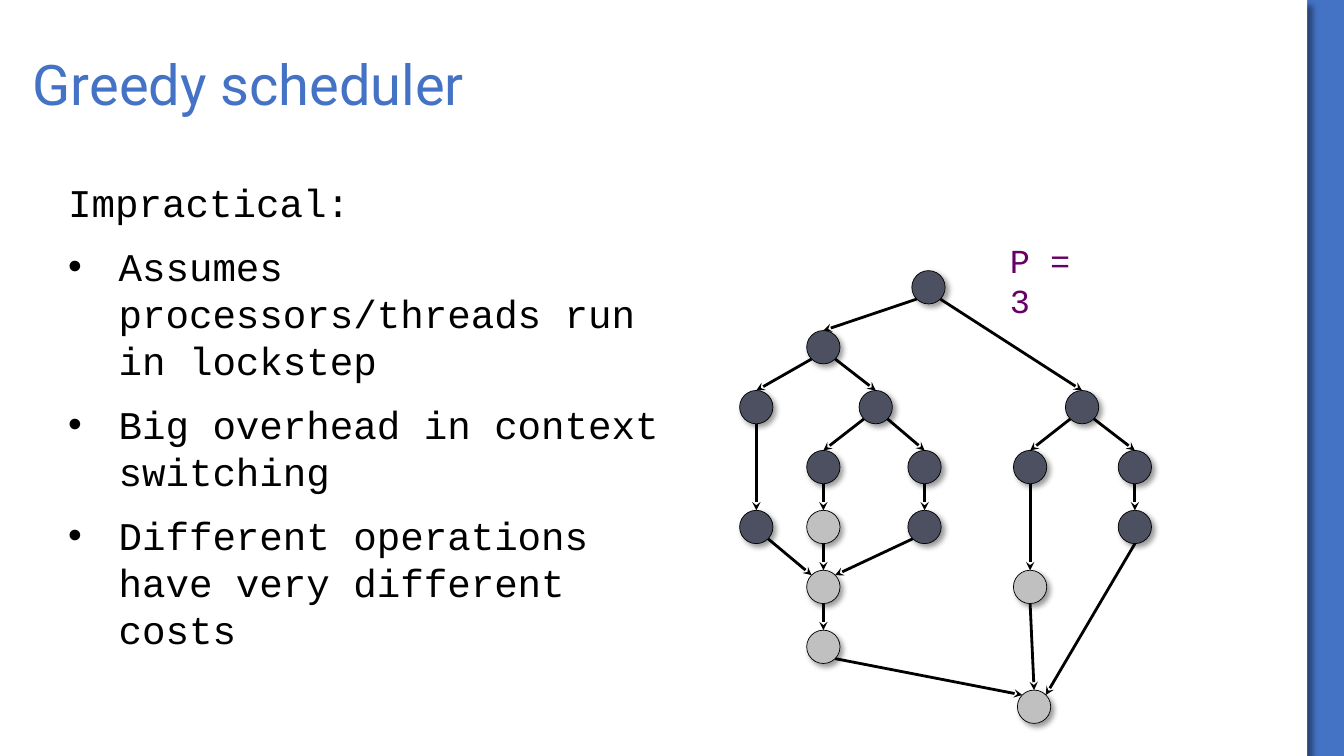
import math

import pptx
import pptx.dml.color
import pptx.enum.shapes
import pptx.enum.text
import pptx.oxml
import pptx.oxml.ns
import pptx.util

Cm = pptx.util.Cm
Pt = pptx.util.Pt
RGB = pptx.dml.color.RGBColor
Anchor = pptx.enum.text.MSO_ANCHOR
Fit = pptx.enum.text.MSO_AUTO_SIZE
Kind = pptx.enum.shapes.MSO_SHAPE

BLUE = RGB(0x44, 0x72, 0xC4)
WHITE = RGB(0xFF, 0xFF, 0xFF)
BLACK = RGB(0, 0, 0)
SLATE = RGB(0x4D, 0x50, 0x61)
GRAY = RGB(0xC0, 0xC0, 0xC0)
PURPLE = RGB(0x66, 0x00, 0x66)

TOP, STEP = 7.24, 1.51  # centre of the first row and row gap, in cm
RADIUS = 0.42

# name: (centre x in cm, row, colour)
NODES = {
    "root": (23.4, 0, SLATE),
    "left": (20.75, 1, SLATE),
    "far": (19.06, 2, SLATE),
    "mid": (22.07, 2, SLATE),
    "right": (27.27, 2, SLATE),
    "mid a": (20.75, 3, SLATE),
    "mid b": (23.3, 3, SLATE),
    "right a": (25.96, 3, SLATE),
    "right b": (28.6, 3, SLATE),
    "far end": (19.06, 4, SLATE),
    "a end": (20.75, 4, GRAY),
    "b end": (23.3, 4, SLATE),
    "right end": (28.6, 4, SLATE),
    "join": (20.75, 5, GRAY),
    "right join": (25.96, 5, GRAY),
    "last": (20.75, 6, GRAY),
    "sink": (26.06, 7, GRAY),
}

# sides of a circle, as angles clockwise from the right
N, NE, SE, S, SW, NW = -90, -45, 45, 90, 135, 225

EDGES = [
    ("root", SW, "left", N), ("root", SE, "right", N),
    ("left", SW, "far", N), ("left", SE, "mid", N),
    ("mid", SW, "mid a", N), ("mid", SE, "mid b", N),
    ("right", SW, "right a", N), ("right", SE, "right b", N),
    ("far", S, "far end", N), ("mid a", S, "a end", N),
    ("mid b", S, "b end", N), ("right b", S, "right end", N),
    ("right a", S, "right join", N), ("far end", SE, "join", NW),
    ("a end", S, "join", N), ("b end", SW, "join", NE),
    ("join", S, "last", N), ("last", SE, "sink", NW),
    ("right join", S, "sink", N), ("right end", S, "sink", NE),
]

POINTS = [
    "Assumes processors/threads run in lockstep",
    "Big overhead in context switching",
    "Different operations have very different costs",
]


class Deck:
    def __init__(self):
        self.prs = pptx.Presentation()
        self.prs.slide_width = Cm(33.87)
        self.prs.slide_height = Cm(19.05)
        self.slide = self.prs.slides.add_slide(self.prs.slide_layouts[6])
        self.mono = "Courier New"
        self.head = "Roboto"

    def ground(self, color):
        fill = self.slide.background.fill
        fill.solid()
        fill.fore_color.rgb = color

    def shape(self, kind, x, y, w, h, color, dist, edge=None):
        """Add a filled shape whose shadow falls dist points to the lower right."""
        item = self.slide.shapes.add_shape(kind, Cm(x), Cm(y), Cm(w), Cm(h))
        item.fill.solid()
        item.fill.fore_color.rgb = color
        if edge is None:
            item.line.fill.background()
        else:
            item.line.color.rgb = edge
            item.line.width = Pt(0.5)
        item.shadow.inherit = False
        glow = item._element.spPr.find(pptx.oxml.ns.qn("a:effectLst"))
        glow.append(pptx.oxml.parse_xml(
            f'<a:outerShdw {pptx.oxml.ns.nsdecls("a")} blurRad="{Pt(4)}" '
            f'dist="{Pt(dist)}" dir="2700000" algn="tl" rotWithShape="0">'
            '<a:srgbClr val="000000"><a:alpha val="40000"/></a:srgbClr>'
            '</a:outerShdw>'))

    def node(self, x, row, color):
        y = TOP + row * STEP
        self.shape(Kind.OVAL, x - RADIUS, y - RADIUS, 2 * RADIUS, 2 * RADIUS,
                   color, 3, BLACK)

    def rim(self, name, side):
        """Return the point on a node's outline at the given side."""
        x, row, _ = NODES[name]
        turn = math.radians(side)
        return (Cm(x + RADIUS * math.cos(turn)),
                Cm(TOP + row * STEP + RADIUS * math.sin(turn)))

    def arrow(self, start, out, end, into):
        line = self.slide.shapes.add_connector(
            pptx.enum.shapes.MSO_CONNECTOR.STRAIGHT,
            *self.rim(start, out), *self.rim(end, into))
        line.line.color.rgb = BLACK
        line.line.width = Pt(2)
        space = pptx.oxml.ns.nsdecls("a")
        line.line._get_or_add_ln().append(
            pptx.oxml.parse_xml(f'<a:tailEnd {space} type="stealth"/>'))
        line._element.spPr.append(
            pptx.oxml.parse_xml(f'<a:effectLst {space}/>'))

    def text(self, x, y, w, h, lines, font, size, color):
        box = self.slide.shapes.add_textbox(Cm(x), Cm(y), Cm(w), Cm(h))
        frame = box.text_frame
        frame.word_wrap = True
        frame.text = "\n".join(lines)
        for para in frame.paragraphs:
            for run in para.runs:
                run.font.name = font
                run.font.size = Pt(size)
                run.font.color.rgb = color
        return frame

    def bullet(self, para):
        props = para._p.get_or_add_pPr()
        props.set("marL", str(Cm(1.27)))
        props.set("indent", str(-Cm(1.27)))
        space = pptx.oxml.ns.nsdecls("a")
        for mark in ('buFont {} typeface="Arial"', 'buChar {} char="•"'):
            props.append(pptx.oxml.parse_xml(f"<a:{mark.format(space)}/>"))


def main():
    deck = Deck()
    deck.ground(BLUE)
    deck.shape(Kind.RECTANGLE, 0, 0, 32.94, 19.05, WHITE, 6)

    for edge in EDGES:
        deck.arrow(*edge)
    for node in NODES.values():
        deck.node(*node)

    label = deck.text(25.2, 5.92, 2.74, 1.27, ["P = 3"], deck.mono, 24, PURPLE)
    label.auto_size = Fit.SHAPE_TO_FIT_TEXT

    body = deck.text(1.47, 4.37, 15.75, 9.9, ["Impractical:", *POINTS],
                     deck.mono, 28, BLACK)
    body.auto_size = Fit.SHAPE_TO_FIT_TEXT
    for para in body.paragraphs:
        para.space_after = Pt(12)
    for para in body.paragraphs[1:]:
        deck.bullet(para)

    title = deck.text(0.58, 0.61, 28.63, 3.18, ["Greedy scheduler"],
                      deck.head, 40, BLUE)
    title.vertical_anchor = Anchor.MIDDLE
    title.paragraphs[0].line_spacing = 0.9

    deck.prs.save("out.pptx")


if __name__ == "__main__":
    main()
